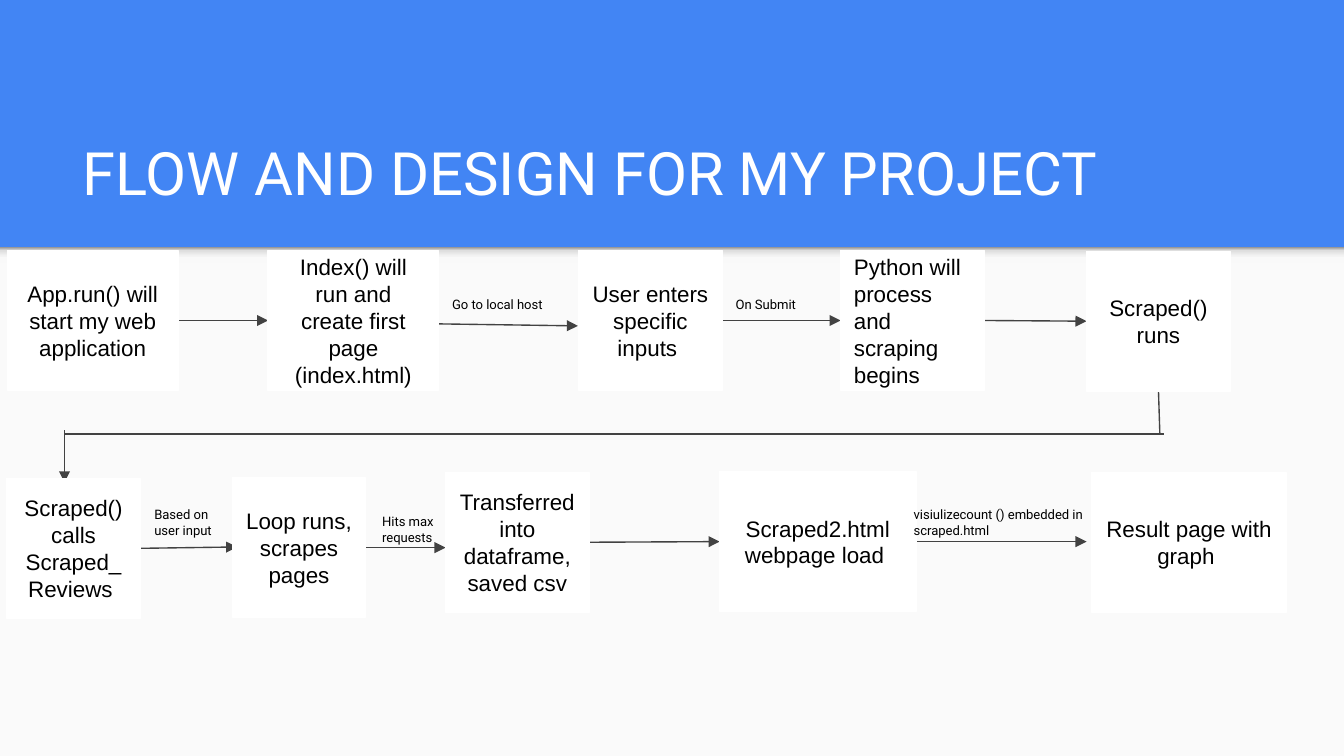
import pptx
import pptx.util
import pptx.dml.color
import pptx.enum.shapes
import pptx.enum.text
import pptx.oxml.ns
import lxml.etree

PX = 4572
COLORS = {"blue": "4285F4", "panel": "FAFAFA", "white": "FFFFFF", "black": "000000", "line": "424242"}
SHADE = [(0, "F9F9F9"), (36, "F9F9F9"), (80, "DEDEDE"), (100, "999999")]
RECT = pptx.enum.shapes.MSO_SHAPE.RECTANGLE
STRAIGHT = pptx.enum.shapes.MSO_CONNECTOR.STRAIGHT
LEFT, CENTER = pptx.enum.text.PP_ALIGN.LEFT, pptx.enum.text.PP_ALIGN.CENTER
TOP, MIDDLE, BOTTOM = (pptx.enum.text.MSO_ANCHOR.TOP, pptx.enum.text.MSO_ANCHOR.MIDDLE,
                       pptx.enum.text.MSO_ANCHOR.BOTTOM)
rgb = pptx.dml.color.RGBColor.from_string
qn = pptx.oxml.ns.qn


def write(sp, text, size, font, color, anchor, align):
    tf = sp.text_frame
    frame = {"word_wrap": True, "vertical_anchor": anchor}
    for side in ("left", "top", "right", "bottom"):
        frame["margin_" + side] = 20 * PX
    for name, value in frame.items():
        setattr(tf, name, value)
    p = tf.paragraphs[0]
    p.alignment = align
    r = p.add_run()
    r.text = text
    for name, value in {"size": pptx.util.Pt(size), "name": font}.items():
        setattr(r.font, name, value)
    r.font.color.rgb = rgb(COLORS[color])


def add_rect(x, y, w, h, color):
    sp = s.shapes.add_shape(RECT, x * PX, y * PX, w * PX, h * PX)
    sp.shadow.inherit = False
    sp.fill.solid()
    sp.fill.fore_color.rgb = rgb(COLORS[color])
    sp.line.fill.background()
    return sp


prs = pptx.Presentation()
prs.slide_width, prs.slide_height = 2000 * PX, 1125 * PX
s = prs.slides.add_slide(prs.slide_layouts[6])
s.background.fill.solid()
s.background.fill.fore_color.rgb = rgb(COLORS["blue"])

add_rect(0, 368, 2000, 757, "panel")
sp = add_rect(0, 368, 2000, 24, "panel")
sp.fill.gradient()
sp.fill.gradient_angle = 90
stops = sp._element.spPr.find(".//" + qn("a:gsLst"))
for stop in list(stops):
    stops.remove(stop)
for position, color in SHADE:
    stop = lxml.etree.SubElement(stops, qn("a:gs"), pos=str(position * 1000))
    lxml.etree.SubElement(stop, qn("a:srgbClr"), val=color)

title = s.shapes.add_textbox(103 * PX, 161 * PX, 1798 * PX, 168 * PX)
write(title, "FLOW AND DESIGN FOR MY PROJECT", 32, "Roboto", "white", BOTTOM, LEFT)

arrows = [
    (265, 477, 399, 478, True, ("app", 3), ("index", 1)),
    (652, 482, 860, 485, True, None, None),
    (1075, 478, 1251, 478, True, ("inputs", 3), ("python", 1)),
    (1465, 477, 1617, 478, True, ("python", 3), ("scraped", 1)),
    (1724, 582, 1726, 646, False, ("scraped", 2), None),
    (1732, 646, 96, 646, False, None, None),
    (96, 640, 96, 718, True, None, None),
    (209, 816, 353, 814, True, ("reviews", 3), None),
    (544, 815, 663, 815, True, ("loop", 3), None),
    (877, 807, 1071, 807, True, ("csv", 3), ("webpage", 1)),
    (1363, 806, 1617, 806, True, ("webpage", 3), None),
]
connectors = []
for x1, y1, x2, y2, head, begin, end in arrows:
    cn = s.shapes.add_connector(STRAIGHT, x1 * PX, y1 * PX, x2 * PX, y2 * PX)
    cn.line.color.rgb = rgb(COLORS["line"])
    cn.line.width = pptx.util.Pt(0.75)
    if head:
        lxml.etree.SubElement(cn.line._get_or_add_ln(), qn("a:tailEnd"), type="triangle")
    lxml.etree.SubElement(cn._element.spPr, qn("a:effectLst"))
    connectors.append((cn, begin, end))

steps = [
    ("app", 11, 373, 254, "App.run() will start my web application", CENTER),
    ("index", 399, 373, 254, "Index() will run and create first page (index.html)", CENTER),
    ("inputs", 861, 373, 214, "User enters specific inputs ", CENTER),
    ("python", 1251, 373, 214, "Python will process and scraping begins", LEFT),
    ("scraped", 1617, 374, 214, "Scraped() runs", CENTER),
    ("reviews", 10, 712, 199, "Scraped() calls Scraped_Reviews ", CENTER),
    ("loop", 346, 711, 198, "Loop runs, scrapes pages", CENTER),
    ("csv", 663, 703, 214, "Transferred into dataframe, saved csv", CENTER),
    ("webpage", 1071, 702, 292, "Scraped2.html webpage load ", CENTER),
    ("result", 1624, 703, 291, "Result page with graph ", CENTER),
]
boxes = {}
for key, x, y, w, text, align in steps:
    sp = add_rect(x, y, w, 208, "white")
    sp.line.color.rgb = rgb(COLORS["white"])
    sp.line.width = pptx.util.Pt(0.75)
    write(sp, text, 12, "Arial", "black", MIDDLE, align)
    boxes[key] = sp

for cn, begin, end in connectors:
    if begin:
        cn.begin_connect(boxes[begin[0]], begin[1])
    if end:
        cn.end_connect(boxes[end[0]], end[1])

labels = [
    (653, 430, 290, 64, "Go to local host"),
    (1075, 430, 290, 64, "On Submit"),
    (210, 734, 144, 88, "Based on user input"),
    (549, 744, 144, 88, "Hits max requests"),
    (1340, 734, 300, 88, "visiulizecount () embedded in scraped.html"),
]
for x, y, w, h, text in labels:
    sp = s.shapes.add_textbox(x * PX, y * PX, w * PX, h * PX)
    write(sp, text, 7, "Roboto", "black", TOP, LEFT)

prs.save("out.pptx")
